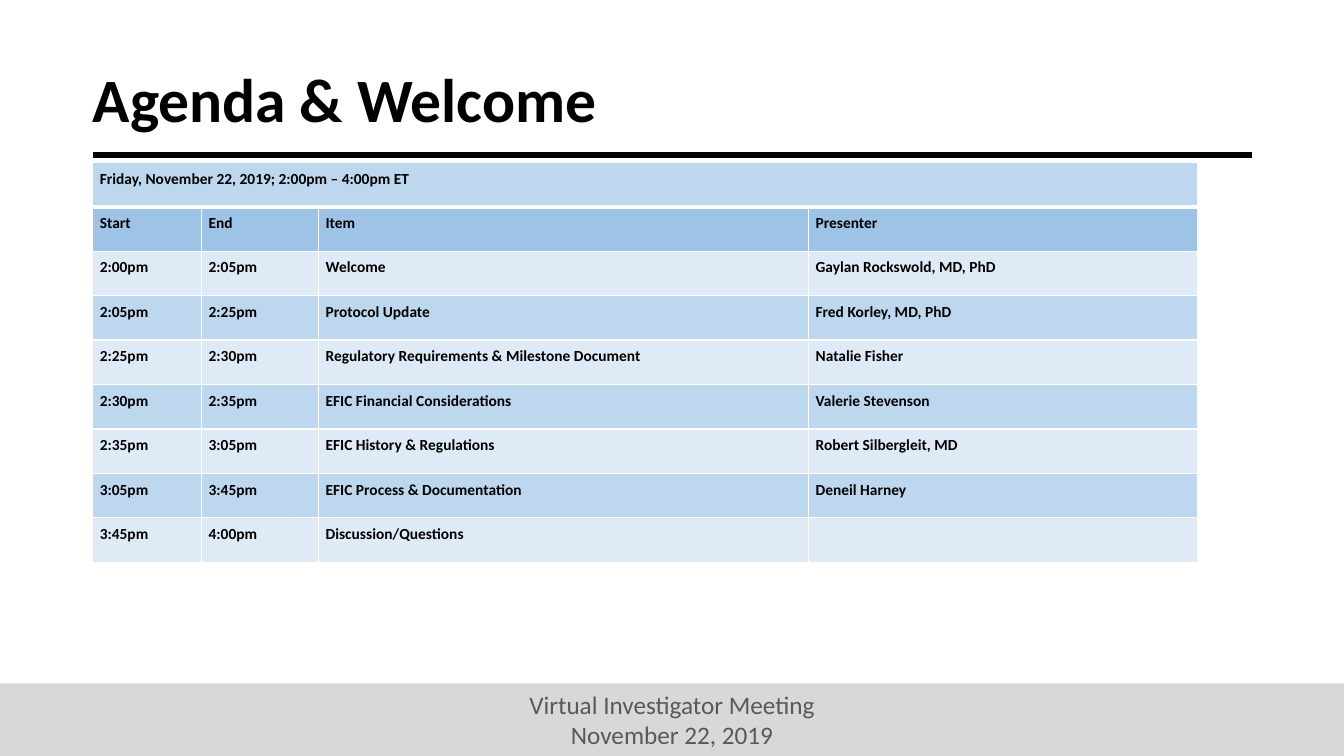
from lxml.etree import SubElement
from pptx import Presentation
from pptx.dml.color import RGBColor
from pptx.enum.shapes import MSO_CONNECTOR, MSO_SHAPE
from pptx.enum.text import MSO_ANCHOR, MSO_AUTO_SIZE, PP_ALIGN
from pptx.oxml.ns import qn
from pptx.util import Inches, Pt

COLORS = {"ink": "000000", "white": "FFFFFF", "band": "D8D8D8", "gray": "595959",
          "head": "9DC3E6", "mid": "BDD7EE", "pale": "DEEBF7"}
COLS = [1.08, 1.16, 4.86, 3.86]
DATE = "Friday, November 22, 2019; 2:00pm – 4:00pm ET"
AGENDA = [
    ("Start", "End", "Item", "Presenter"),
    ("2:00pm", "2:05pm", "Welcome", "Gaylan Rockswold, MD, PhD"),
    ("2:05pm", "2:25pm", "Protocol Update", "Fred Korley, MD, PhD"),
    ("2:25pm", "2:30pm", "Regulatory Requirements & Milestone Document", "Natalie Fisher"),
    ("2:30pm", "2:35pm", "EFIC Financial Considerations", "Valerie Stevenson"),
    ("2:35pm", "3:05pm", "EFIC History & Regulations", "Robert Silbergleit, MD"),
    ("3:05pm", "3:45pm", "EFIC Process & Documentation", "Deneil Harney"),
    ("3:45pm", "4:00pm", "Discussion/Questions", ""),
]


def color(name):
    return RGBColor.from_string(COLORS[name])


def apply(obj, **values):
    """Set each named attribute on obj."""
    for name, value in values.items():
        setattr(obj, name, value)


def write(par, text, size, tone, bold=False):
    run = par.add_run()
    run.text = text
    apply(run.font, name="Calibri", size=Pt(size), bold=bold)
    run.font.color.rgb = color(tone)


def add_title(slide, left, top, width, height):
    title = slide.shapes.title
    apply(title, left=Inches(left), top=Inches(top),
          width=Inches(width), height=Inches(height))
    frame = title.text_frame
    pad = Inches(0.1)
    apply(frame, auto_size=MSO_AUTO_SIZE.NONE, word_wrap=True,
          vertical_anchor=MSO_ANCHOR.MIDDLE, margin_left=pad,
          margin_right=pad, margin_top=pad, margin_bottom=pad)
    par = frame.paragraphs[0]
    apply(par, alignment=PP_ALIGN.LEFT, line_spacing=0.9)
    write(par, "Agenda & Welcome", 44, "ink", True)


def add_rule(slide, left, top, width):
    y = Inches(top)
    rule = slide.shapes.add_connector(
        MSO_CONNECTOR.STRAIGHT, Inches(left), y, Inches(left + width), y)
    rule.line.width = Pt(4.5)
    rule.line.color.rgb = color("ink")
    SubElement(rule.element.spPr, qn("a:effectLst"))


def add_footer(slide, left, top, width, height):
    band = slide.shapes.add_shape(
        MSO_SHAPE.RECTANGLE, Inches(left), Inches(top), Inches(width), Inches(height))
    band.shadow.inherit = False
    band.fill.solid()
    band.fill.fore_color.rgb = color("band")
    band.line.fill.background()
    frame = band.text_frame
    apply(frame, word_wrap=True, vertical_anchor=MSO_ANCHOR.MIDDLE)
    pars = [frame.paragraphs[0], frame.add_paragraph()]
    for par, text in zip(pars, ("Virtual Investigator Meeting", "November 22, 2019")):
        par.alignment = PP_ALIGN.CENTER
        write(par, text, 18, "gray")


def add_edges(cell, **widths):
    """Draw white cell borders, 1 pt unless a side is given another width."""
    props = cell._tc.get_or_add_tcPr()
    for side in ("lnL", "lnR", "lnT", "lnB"):
        edge = SubElement(props, qn(f"a:{side}"), w=str(Pt(widths.get(side, 1))))
        fill = SubElement(edge, qn("a:solidFill"))
        SubElement(fill, qn("a:srgbClr"), val=COLORS["white"])


def add_agenda(slide, left, top, width, height):
    rows = [(DATE, "", "", "")] + AGENDA
    table = slide.shapes.add_table(
        len(rows), len(COLS), Inches(left), Inches(top),
        Inches(width), Inches(height)).table
    apply(table, first_row=False, horz_banding=False)
    for col, share in zip(table.columns, COLS):
        col.width = Inches(width * share / sum(COLS))
    table.cell(0, 0).merge(table.cell(0, len(COLS) - 1))
    pad = Inches(0.07)
    for r, row in enumerate(rows):
        tone = "head" if r == 1 else "pale" if r % 2 == 0 and r else "mid"
        heavy = {0: {"lnB": 3}, 1: {"lnT": 3}}.get(r, {})
        for c, text in enumerate(row):
            cell = table.cell(r, c)
            apply(cell, margin_left=pad, margin_right=pad,
                  margin_top=pad, margin_bottom=pad)
            add_edges(cell, **heavy)
            cell.fill.solid()
            cell.fill.fore_color.rgb = color(tone)
            if text:
                write(cell.text_frame.paragraphs[0], text, 11, "ink", True)


def main():
    deck = Presentation()
    apply(deck, slide_width=Inches(13.33), slide_height=Inches(7.5))
    slide = deck.slides.add_slide(deck.slide_layouts[5])
    add_rule(slide, 0.92, 1.54, 11.5)
    add_footer(slide, 0, 6.78, 13.33, 0.72)
    add_title(slide, 0.82, 0.29, 10.37, 1.45)
    add_agenda(slide, 0.92, 1.61, 10.96, 3.97)
    deck.save("out.pptx")


if __name__ == "__main__":
    main()
